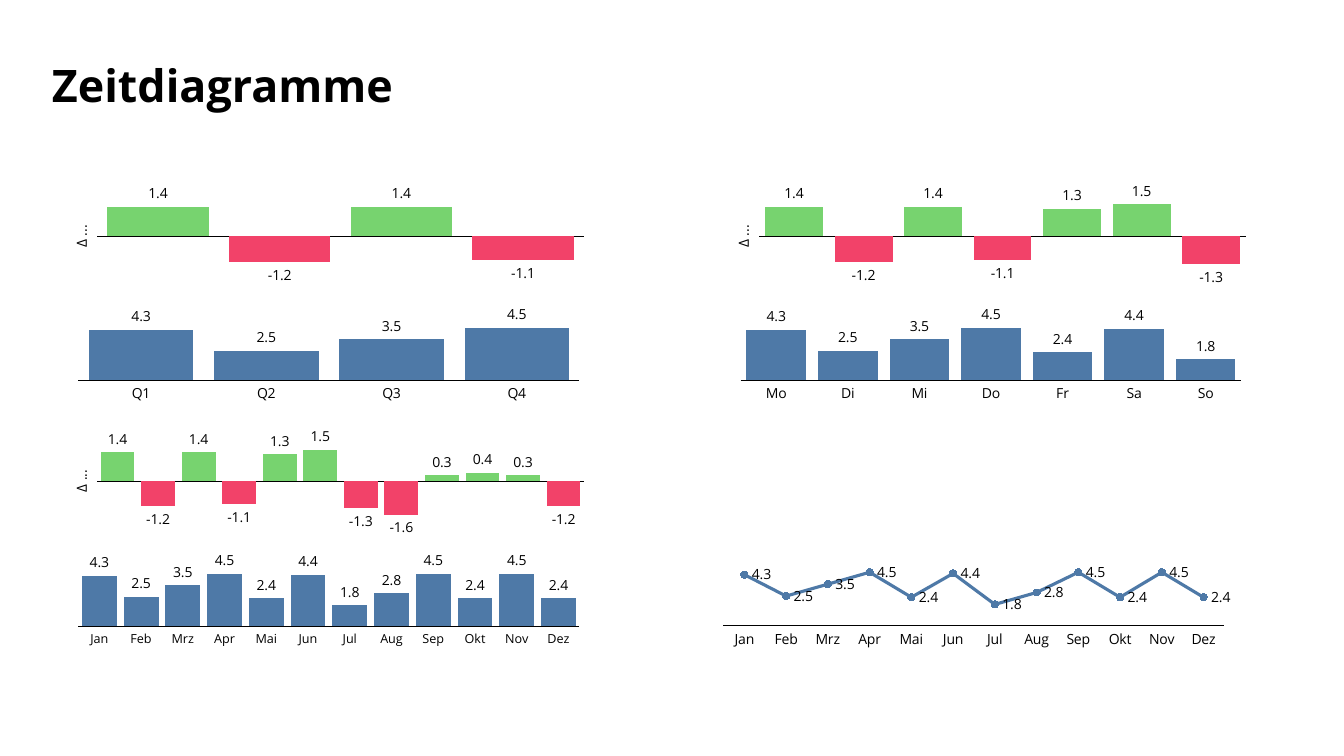
from lxml import etree
from pptx import Presentation
from pptx import util as u
from pptx.chart import data as cd
from pptx.dml import color as dc
from pptx.enum import chart as ec
from pptx.enum import text as et
from pptx.oxml import ns

PX = 914400 / 100.8
FONT = "Open Sans"
BLACK, BLUE, GREEN, RED = "000000", "4E79A7", "77D36F", "F24269"
CHART_WIDTH, CHART_HEIGHT = 553, 110
DELTA_PLOT = {"x": 0.1, "y": 0.02, "w": 0.88, "h": 0.97}
VALUE_PLOT = {"x": 0.066, "y": 0.14, "w": 0.906, "h": 0.541}
QUARTERS = ["Q1", "Q2", "Q3", "Q4"]
DAYS = ["Mo", "Di", "Mi", "Do", "Fr", "Sa", "So"]
MONTHS = ["Jan", "Feb", "Mrz", "Apr", "Mai", "Jun",
          "Jul", "Aug", "Sep", "Okt", "Nov", "Dez"]
VALUES = [4.3, 2.5, 3.5, 4.5, 2.4, 4.4, 1.8, 2.8, 4.5, 2.4, 4.5, 2.4]
DELTAS = [1.4, -1.2, 1.4, -1.1, 1.3, 1.5, -1.3, -1.6, 0.3, 0.4, 0.3, -1.2]
WEEK_VALUES = VALUES[:len(DAYS)]
WEEK_DELTAS = DELTAS[:len(DAYS)]


def px(length):
    """Turn pixels into EMU."""
    return u.Emu(round(length * PX))


def rgb(value):
    """Turn a hex string into a colour."""
    return dc.RGBColor.from_string(value)


def paint(fill, value):
    """Make a fill solid in one colour."""
    fill.solid()
    fill.fore_color.rgb = rgb(value)


def style_font(font, size, bold=False):
    """Set the common typeface, size and colour."""
    font.name = FONT
    font.size = u.Pt(size)
    font.bold = bold
    font.color.rgb = rgb(BLACK)


def set_layout(parent, place, after):
    """Place a chart part by fractions of the chart area."""
    for old in parent.findall(ns.qn("c:layout")):
        parent.remove(old)
    layout = etree.Element(ns.qn("c:layout"))
    manual = etree.SubElement(layout, ns.qn("c:manualLayout"))
    settings = {"xMode": "edge", "yMode": "edge", **place}
    if "w" in place:
        settings = {"layoutTarget": "inner", **settings}
    for name, value in settings.items():
        etree.SubElement(manual, ns.qn("c:" + name)).set("val", str(value))
    parent.insert(after, layout)


def add_title(page, words):
    """Add the slide heading."""
    box = page.shapes.add_textbox(px(42), px(56), px(1259), px(65))
    frame = box.text_frame
    frame.word_wrap = True
    frame.vertical_anchor = et.MSO_ANCHOR.MIDDLE
    frame.text = words
    para = frame.paragraphs[0]
    para.line_spacing = 0.9
    style_font(para.runs[0].font, 32, bold=True)


def add_time_chart(page, kind, left, top, categories, values, plot, size=10):
    """Add a one-series chart with only a time axis and value labels."""
    source = cd.CategoryChartData()
    source.categories = categories
    source.add_series("Series 1", values)
    chart = page.shapes.add_chart(kind, px(left), px(top), px(CHART_WIDTH),
                                  px(CHART_HEIGHT), source).chart
    chart.has_legend = False
    chart.has_title = False
    style_font(chart.font, 10)
    time_axis = chart.category_axis
    time_axis.major_tick_mark = ec.XL_TICK_MARK.NONE
    time_axis.has_major_gridlines = False
    style_font(time_axis.tick_labels.font, size)
    time_axis.format.line.width = u.Pt(0.75)
    time_axis.format.line.color.rgb = rgb(BLACK)
    chart.value_axis.visible = False
    chart.value_axis.has_major_gridlines = False
    series_plot = chart.plots[0]
    series_plot.vary_by_categories = False
    labels = series_plot.series[0].data_labels
    labels.show_value = True
    style_font(labels.font, 10)
    set_layout(chart.plots[0].series[0].format and
               chart.element.find(".//" + ns.qn("c:plotArea")), plot, 0)
    return chart


def add_columns(page, left, top, categories, values, plot, color, size=10):
    """Add a column chart in one colour."""
    chart = add_time_chart(page, ec.XL_CHART_TYPE.COLUMN_CLUSTERED, left, top,
                           categories, values, plot, size)
    columns = chart.plots[0]
    columns.gap_width = 20
    columns.overlap = -27
    series = columns.series[0]
    series.invert_if_negative = False
    series.data_labels.position = ec.XL_LABEL_POSITION.OUTSIDE_END
    paint(series.format.fill, color)
    return chart


def add_deltas(page, left, top, values):
    """Add a deviation chart with gains in green and losses in red."""
    steps = [str(step) for step in range(1, len(values) + 1)]
    chart = add_columns(page, left, top, steps, values, DELTA_PLOT, GREEN)
    chart.category_axis.tick_label_position = ec.XL_TICK_LABEL_POSITION.NONE
    axis = chart.value_axis
    axis.minimum_scale, axis.maximum_scale = -2.5, 2.5
    axis.has_title = True
    frame = axis.axis_title.text_frame
    frame.text = "Δ ..."
    style_font(frame.paragraphs[0].runs[0].font, 10)
    title = chart.element.find(".//" + ns.qn("c:valAx") + "/" + ns.qn("c:title"))
    body = title.find(".//" + ns.qn("a:bodyPr"))
    body.set("rot", "-5400000")
    body.set("vert", "horz")
    set_layout(title, {"x": 0.047, "y": 0.38}, 1)
    series = chart.plots[0].series[0]
    series.data_labels.number_format = "#,##0.0"
    series.data_labels.number_format_is_linked = False
    for index, value in enumerate(values):
        if value < 0:
            paint(series.points[index].format.fill, RED)


def add_line(page, left, top, categories, values):
    """Add a line chart with round markers."""
    chart = add_time_chart(page, ec.XL_CHART_TYPE.LINE_MARKERS, left, top,
                           categories, values, VALUE_PLOT)
    series = chart.plots[0].series[0]
    series.smooth = False
    series.data_labels.position = ec.XL_LABEL_POSITION.RIGHT
    series.format.line.width = u.Pt(2.25)
    series.format.line.color.rgb = rgb(BLUE)
    series.marker.style = ec.XL_MARKER_STYLE.CIRCLE
    series.marker.size = 5
    paint(series.marker.format.fill, BLUE)
    series.marker.format.line.color.rgb = rgb(BLUE)


def main():
    """Build the slide and save it."""
    deck = Presentation()
    deck.slide_width, deck.slide_height = px(1344), px(756)
    page = deck.slides.add_slide(deck.slide_layouts[6])
    add_title(page, "Zeitdiagramme")
    groups = [(42, 181, QUARTERS, 10), (704, 181, DAYS, 10), (42, 427, MONTHS, 9)]
    for left, top, categories, size in groups:
        count = len(categories)
        add_deltas(page, left, top, DELTAS[:count])
        add_columns(page, left, top + 124, categories, VALUES[:count],
                    VALUE_PLOT, BLUE, size)
    add_line(page, 687, 551, MONTHS, VALUES)
    deck.save("out.pptx")


if __name__ == "__main__":
    main()
